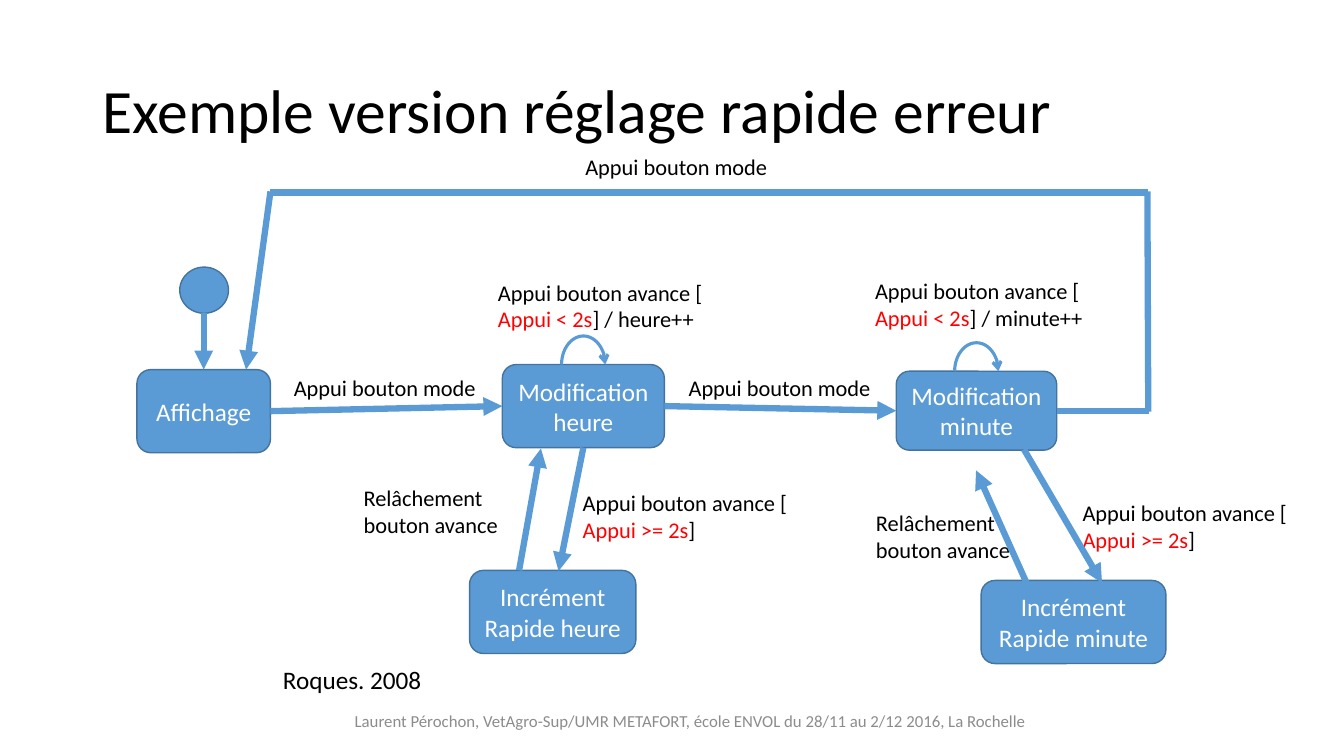
from typing import NamedTuple, Optional

from lxml.etree import SubElement
from pptx import Presentation
from pptx.dml.color import RGBColor
from pptx.enum.shapes import MSO_CONNECTOR, MSO_SHAPE
from pptx.enum.text import MSO_ANCHOR, MSO_AUTO_SIZE, PP_ALIGN
from pptx.oxml.ns import qn
from pptx.shapes.autoshape import Shape
from pptx.shapes.connector import Connector
from pptx.text.text import TextFrame
from pptx.util import Emu, Inches, Pt

BLUE = RGBColor(0x5B, 0x9B, 0xD5)
OUTLINE = RGBColor(0x43, 0x73, 0x9E)
BLACK = RGBColor(0, 0, 0)
WHITE = RGBColor(0xFF, 0xFF, 0xFF)
RED = RGBColor(0xFF, 0, 0)
GREY = RGBColor(0x8C, 0x8C, 0x8C)
FONT = "Calibri"

COLUMNS = 160  # square grid: 160 columns by 90 rows
TOP, LEFT, BOTTOM, RIGHT = range(4)

prs = Presentation()
prs.slide_width, prs.slide_height = Inches(13.333), Inches(7.5)
slide = prs.slides.add_slide(prs.slide_layouts[6])


class Area(NamedTuple):
    column: float
    row: float
    columns: float
    rows: float


class Point(NamedTuple):
    column: float
    row: float


class Run(NamedTuple):
    text: str
    color: RGBColor = BLACK


class State(NamedTuple):
    area: Area
    lines: list[str]
    loops: bool = False


class Label(NamedTuple):
    area: Area
    lines: list[list[Run]]


class End(NamedTuple):
    """A transition's end: the middle of a state's side."""
    state: str
    side: int


class Transition(NamedTuple):
    start: Point | End
    finish: Point | End
    arrow: bool = True


def grid(units: float) -> Emu:
    return Emu(round(units * prs.slide_width / COLUMNS))


def place(area: Area) -> list[Emu]:
    return [grid(units) for units in area]


def write(frame: TextFrame, lines: list[list[Run]], size: float,
          align: Optional[PP_ALIGN] = None) -> None:
    for number, runs in enumerate(lines):
        paragraph = frame.add_paragraph() if number else frame.paragraphs[0]
        paragraph.alignment = align
        for text, color in runs:
            run = paragraph.add_run()
            run.text = text
            run.font.name, run.font.size = FONT, Pt(size)
            run.font.color.rgb = color


def add_text(area: Area, lines: list[list[Run]], size: float, wrap: bool = True,
             anchor: MSO_ANCHOR = MSO_ANCHOR.TOP,
             align: Optional[PP_ALIGN] = None) -> TextFrame:
    frame = slide.shapes.add_textbox(*place(area)).text_frame
    frame.word_wrap = wrap
    frame.vertical_anchor = anchor
    if not wrap:
        frame.auto_size = MSO_AUTO_SIZE.SHAPE_TO_FIT_TEXT
    write(frame, lines, size, align)
    return frame


def add_node(preset: MSO_SHAPE, area: Area) -> Shape:
    node = slide.shapes.add_shape(preset, *place(area))
    node.shadow.inherit = False
    node.fill.solid()
    node.fill.fore_color.rgb = BLUE
    node.line.color.rgb = OUTLINE
    node.line.width = Pt(1)
    return node


def style_stroke(stroke: Shape | Connector, width: float, arrow: Optional[str]) -> None:
    stroke.line.color.rgb = BLUE
    stroke.line.width = Pt(width)
    if arrow:
        SubElement(stroke.line._get_or_add_ln(), qn("a:tailEnd"), type=arrow)


def add_state(state: State) -> Shape:
    node = add_node(MSO_SHAPE.ROUNDED_RECTANGLE, state.area)
    node.text_frame.word_wrap = True
    node.text_frame.vertical_anchor = MSO_ANCHOR.MIDDLE
    write(node.text_frame, [[Run(line, WHITE)] for line in state.lines], 18, PP_ALIGN.CENTER)
    return node


def add_loop(area: Area) -> None:
    """Draw a half ellipse standing on the middle of the state's top side."""
    width, height = 5.2, 6.8
    middle = area.column + area.columns / 2
    loop = slide.shapes.add_shape(MSO_SHAPE.ARC, *place(
        Area(middle - width / 2, area.row - height / 2, width, height)))
    loop.adjustments[0], loop.adjustments[1] = 108, 0  # 180 degrees to 0
    loop.shadow.inherit = False
    loop.fill.background()
    style_stroke(loop, 2.25, "arrow")


def add_transition(transition: Transition, nodes: dict[str, Shape]) -> None:
    start, finish = transition.start, transition.finish
    ends = [Point(0, 0) if isinstance(end, End) else end for end in (start, finish)]
    line = slide.shapes.add_connector(
        MSO_CONNECTOR.STRAIGHT, *(grid(units) for end in ends for units in end))
    if isinstance(start, End):
        line.begin_connect(nodes[start.state], start.side)
    if isinstance(finish, End):
        line.end_connect(nodes[finish.state], finish.side)
    style_stroke(line, 4.5, "triangle" if transition.arrow else None)
    SubElement(line._element.spPr, qn("a:effectLst"))


def advance(condition: str, action: str) -> list[list[Run]]:
    return [[Run("Appui bouton avance [")], [Run(condition, RED), Run("]" + action)]]


MODE = [[Run("Appui bouton mode")]]
RELEASE = [[Run("Relâchement")], [Run("bouton avance")]]
SHORT, LONG = "Appui < 2s", "Appui >= 2s"

LABELS = [
    Label(Area(68.5, 17.6, 24.4, 4.4), MODE),
    Label(Area(33.8, 44, 24.4, 4.4), MODE),
    Label(Area(80.8, 44, 24.4, 4.4), MODE),
    Label(Area(58.1, 32.6, 27, 7.7), advance(SHORT, " / heure++")),
    Label(Area(103, 32.4, 27.4, 7.7), advance(SHORT, " / minute++")),
    Label(Area(68.2, 57.6, 27.4, 7.7), advance(LONG, "")),
    Label(Area(127.7, 58.8, 27.4, 7.7), advance(LONG, "")),
    Label(Area(42.1, 57.1, 18.6, 7.7), RELEASE),
    Label(Area(103.1, 60, 18.6, 7.7), RELEASE),
]
STATES = {
    "display": State(Area(16.3, 44, 15.9, 9.9), ["Affichage"]),
    "hour": State(Area(59.8, 43.4, 19.3, 9.9), ["Modification", "heure"], True),
    "minute": State(Area(106.7, 44.2, 19.1, 9.4), ["Modification", "minute"], True),
    "fast hour": State(Area(55.9, 67.9, 19.8, 9.9), ["Incrément", "Rapide heure"]),
    "fast minute": State(Area(116.8, 69.1, 22, 9.9), ["Incrément", "Rapide minute"]),
}
INITIAL = Area(21.4, 31.8, 5.8, 5.5)
TRANSITIONS = [
    Transition(Point(24.25, 37.3), End("display", TOP)),
    Transition(End("display", RIGHT), End("hour", LEFT)),
    Transition(End("hour", RIGHT), End("minute", LEFT)),
    Transition(End("minute", RIGHT), Point(136.8, 48.9), False),
    Transition(Point(136.7, 49), Point(136.6, 22.8), False),
    Transition(Point(136.7, 22.9), Point(32.2, 22.9), False),
    Transition(Point(32.2, 22.8), Point(29.3, 44)),
    Transition(Point(61.8, 67.9), Point(64.4, 53.4)),
    Transition(End("hour", BOTTOM), Point(66.5, 68)),
    Transition(Point(121.9, 53.5), Point(131.2, 69.4)),
    Transition(Point(123.2, 71.6), Point(116.2, 56)),
]

title = add_text(Area(11, 4.8, 138, 17.4), [[Run("Exemple version réglage rapide erreur")]],
                 44, anchor=MSO_ANCHOR.MIDDLE)
title.paragraphs[0].line_spacing = 0.9
add_text(Area(27.6, 83.4, 109.2, 4.8),
         [[Run("Laurent Pérochon, VetAgro-Sup/UMR METAFORT, "
               "école ENVOL du 28/11 au 2/12 2016, La Rochelle", GREY)]],
         12, anchor=MSO_ANCHOR.MIDDLE, align=PP_ALIGN.CENTER)
add_text(Area(32.5, 78.5, 93, 4.8), [[Run("Roques. 2008")]], 18)
for label in LABELS:
    add_text(label.area, label.lines, 16, wrap=False)
add_node(MSO_SHAPE.OVAL, INITIAL)
state_nodes = {key: add_state(state) for key, state in STATES.items()}
for state in STATES.values():
    if state.loops:
        add_loop(state.area)
for transition in TRANSITIONS:
    add_transition(transition, state_nodes)

prs.save("out.pptx")
